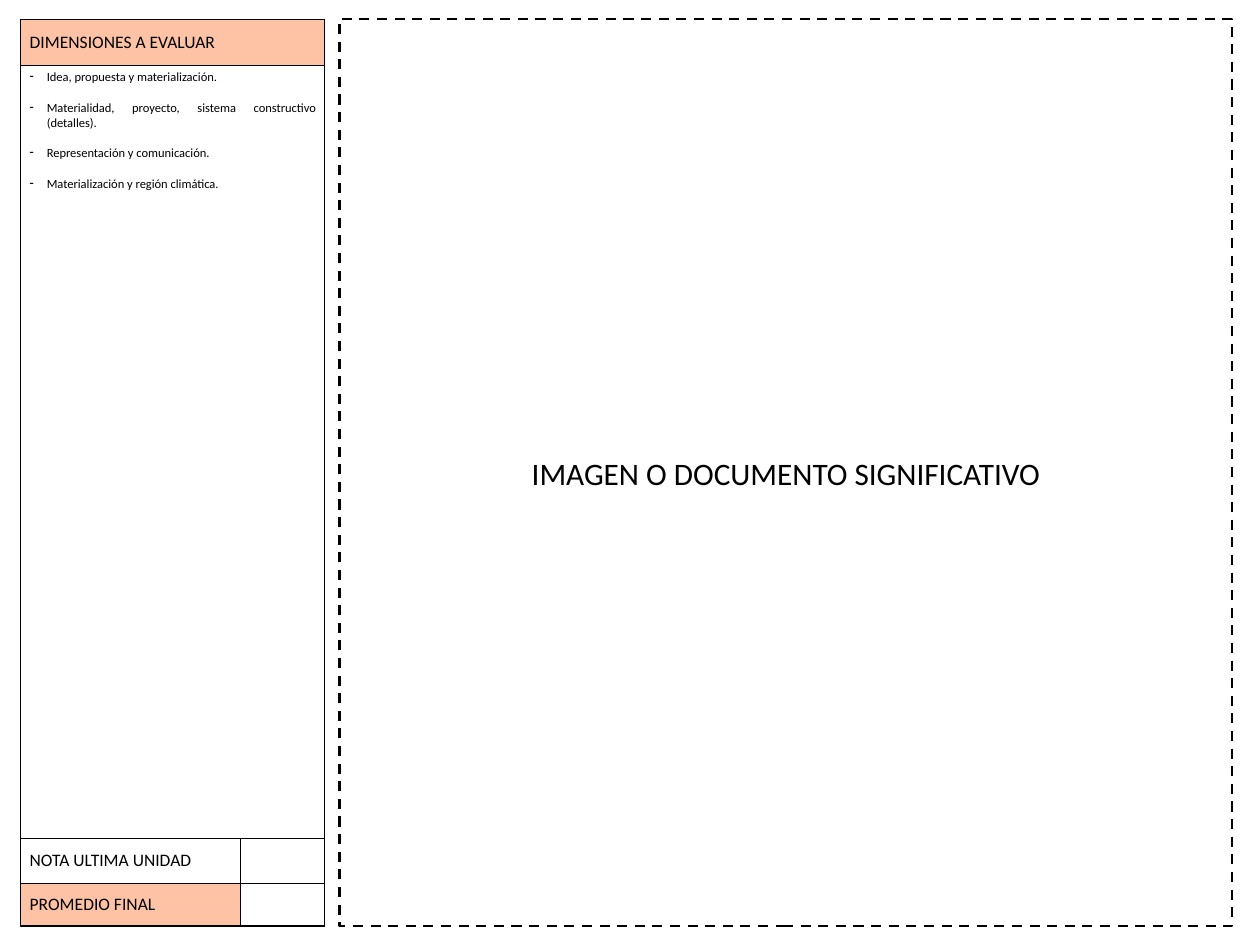
from dataclasses import dataclass

from lxml import etree
from pptx import Presentation
from pptx.dml.color import RGBColor
from pptx.enum.dml import MSO_LINE
from pptx.enum.shapes import MSO_SHAPE
from pptx.enum.text import MSO_ANCHOR, PP_ALIGN
from pptx.oxml.ns import qn
from pptx.util import Inches, Pt

RECTANGLE = MSO_SHAPE.RECTANGLE
DASH = MSO_LINE.DASH
TOP, MIDDLE = MSO_ANCHOR.TOP, MSO_ANCHOR.MIDDLE
LEFT, CENTER, JUSTIFY = PP_ALIGN.LEFT, PP_ALIGN.CENTER, PP_ALIGN.JUSTIFY


@dataclass(frozen=True)
class Theme:
    font: str = "Calibri"
    ink: str = "000000"
    paper: str = "FFFFFF"
    accent: str = "FDC3A4"
    body: int = 10
    label: int = 14
    display: int = 25
    frame_line: int = 2
    thin: float = 0.5
    thick: float = 1


THEME = Theme()
SLIDE_WIDTH, SLIDE_HEIGHT = 14, 10.5
MARGIN_TOP = 0.21
TABLE_LEFT = 0.23
COLUMNS = (2.44, 0.94)
ROWS = (0.52, 8.59, 0.49, 0.48)
FRAME_LEFT, FRAME_WIDTH = 3.77, 9.92
INDENT = 0.19

DIMENSIONS = (
    ("Idea, propuesta y materialización.", JUSTIFY),
    ("Materialidad, proyecto, sistema constructivo (detalles).", JUSTIFY),
    ("Representación y comunicación.", LEFT),
    ("Materialización y región climática.", LEFT),
)
GRADES = (("NOTA ULTIMA UNIDAD", THEME.paper), ("PROMEDIO FINAL", THEME.accent))


def apply(target, formats):
    for name, value in formats.items():
        setattr(target, name, value)


def write(paragraph, text, size, alignment=LEFT):
    paragraph.alignment = alignment
    run = paragraph.add_run()
    run.text = text
    apply(run.font, {"name": THEME.font, "size": Pt(size)})
    run.font.color.rgb = RGBColor.from_string(THEME.ink)


def add_dash_bullet(paragraph):
    properties = paragraph._p.get_or_add_pPr()
    properties.set("marL", str(Inches(INDENT)))
    properties.set("indent", str(-Inches(INDENT)))
    etree.SubElement(properties, qn("a:buFontTx"))
    etree.SubElement(properties, qn("a:buChar"), char="-")


def set_borders(cell, widths):
    """Draw the left, right, top and bottom borders, with widths in points."""
    properties = cell._tc.get_or_add_tcPr()
    for position, (side, width) in enumerate(zip("LRTB", widths)):
        line = etree.Element(qn(f"a:ln{side}"), w=str(Pt(width)))
        fill = etree.SubElement(line, qn("a:solidFill"))
        etree.SubElement(fill, qn("a:srgbClr"), val=THEME.ink)
        properties.insert(position, line)


def style_cell(cell, color, anchor, widths):
    cell.fill.solid()
    cell.fill.fore_color.rgb = RGBColor.from_string(color)
    cell.vertical_anchor = anchor
    set_borders(cell, widths)


def write_dimensions(cell):
    frame = cell.text_frame
    for index, (text, alignment) in enumerate(DIMENSIONS):
        paragraph = frame.add_paragraph() if index else frame.paragraphs[0]
        write(paragraph, text, THEME.body, alignment)
        if index < len(DIMENSIONS) - 1:
            paragraph.space_after = Pt(THEME.body * 1.22)
        add_dash_bullet(paragraph)


def add_evaluation_table(slide):
    shape = slide.shapes.add_table(
        len(ROWS), len(COLUMNS), Inches(TABLE_LEFT), Inches(MARGIN_TOP),
        Inches(sum(COLUMNS)), Inches(sum(ROWS)))
    table = shape.table
    apply(table, {"first_row": False, "horz_banding": False})
    for column, width in zip(table.columns, COLUMNS):
        column.width = Inches(width)
    for row, height in zip(table.rows, ROWS):
        row.height = Inches(height)

    thin, thick = THEME.thin, THEME.thick
    full_rows = ((THEME.accent, MIDDLE, (thick, thick, thin, thick)),
                 (THEME.paper, TOP, (thick,) * 4))
    for row, (color, anchor, widths) in enumerate(full_rows):
        table.cell(row, 0).merge(table.cell(row, 1))
        for column in range(len(COLUMNS)):
            style_cell(table.cell(row, column), color, anchor, widths)
    write(table.cell(0, 0).text_frame.paragraphs[0],
          "DIMENSIONES A EVALUAR", THEME.label)
    write_dimensions(table.cell(1, 0))

    for row, (text, color) in enumerate(GRADES, start=len(full_rows)):
        top = thick if row == len(full_rows) else thin
        bottom = thick if row == len(ROWS) - 1 else thin
        label, grade = table.cell(row, 0), table.cell(row, 1)
        style_cell(label, color, MIDDLE, (thick, thin, top, bottom))
        style_cell(grade, THEME.paper, TOP, (thin, thick, top, bottom))
        write(label.text_frame.paragraphs[0], text, THEME.label)


def add_dashed_frame(slide, text):
    shape = slide.shapes.add_shape(
        RECTANGLE, Inches(FRAME_LEFT), Inches(MARGIN_TOP),
        Inches(FRAME_WIDTH), Inches(sum(ROWS)))
    shape.shadow.inherit = False
    shape.fill.background()
    shape.line.color.rgb = RGBColor.from_string(THEME.ink)
    apply(shape.line, {"width": Pt(THEME.frame_line), "dash_style": DASH})
    apply(shape.text_frame, {"word_wrap": True, "vertical_anchor": MIDDLE})
    write(shape.text_frame.paragraphs[0], text, THEME.display, CENTER)


def main():
    presentation = Presentation()
    apply(presentation, {"slide_width": Inches(SLIDE_WIDTH),
                         "slide_height": Inches(SLIDE_HEIGHT)})
    blank_layout = presentation.slide_layouts[6]
    slide = presentation.slides.add_slide(blank_layout)
    add_dashed_frame(slide, "IMAGEN O DOCUMENTO SIGNIFICATIVO")
    add_evaluation_table(slide)
    presentation.save("out.pptx")


if __name__ == "__main__":
    main()
